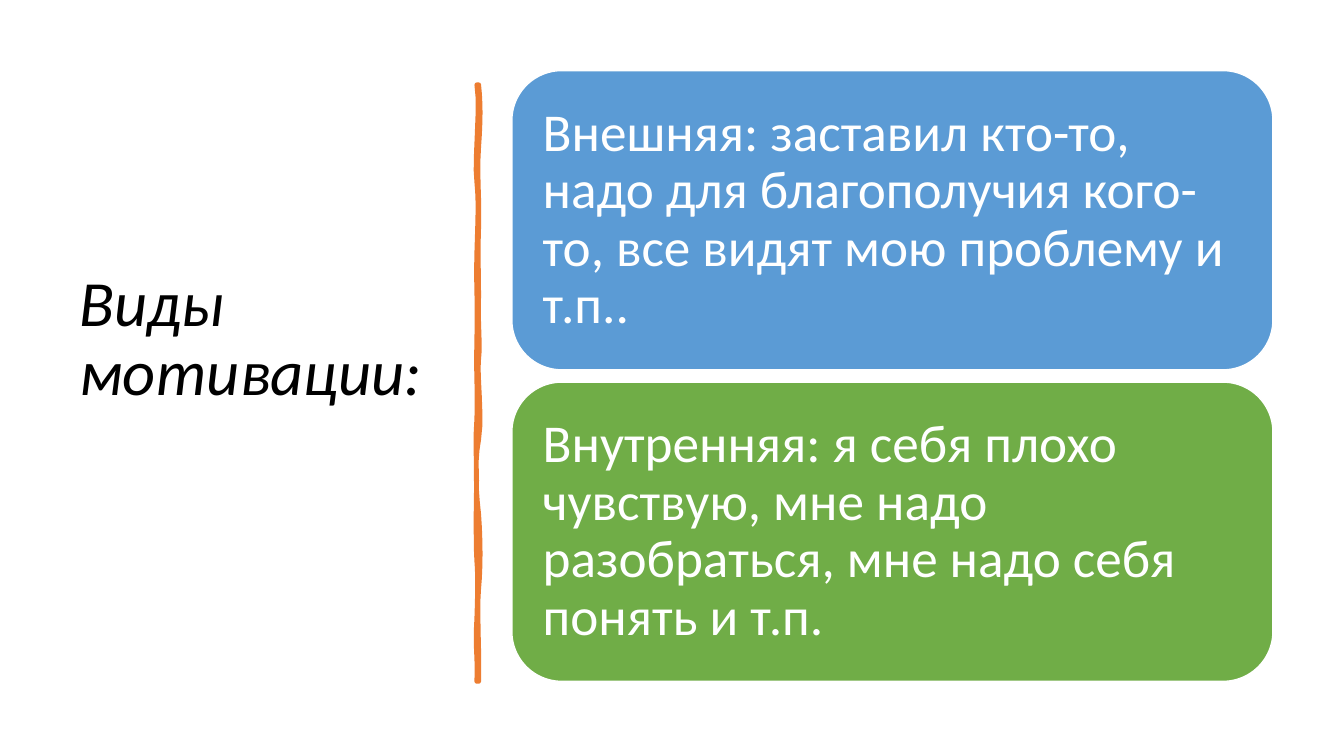
from pptx import Presentation
from pptx.dml.color import RGBColor
from pptx.enum.shapes import MSO_SHAPE as SHAPE
from pptx.enum.text import MSO_ANCHOR as ANCHOR, MSO_AUTO_SIZE as AUTO, PP_ALIGN as ALIGN
from pptx.util import Cm, Pt

BRUSH_UNIT = 0.0254  # cm
BRUSH_START = (475, 84)
# Cubic curves: two control points, then the end point
BRUSH_CURVES = [
    (477, 102, 477, 119, 475, 146), (473, 173, 476, 195, 475, 226),
    (474, 257, 475, 262, 475, 294), (474, 325, 477, 342, 475, 356),
    (473, 370, 479, 414, 475, 436), (471, 457, 472, 484, 475, 510),
    (477, 536, 477, 564, 475, 584), (473, 603, 476, 650, 475, 676),
    (474, 676, 473, 676, 473, 676), (474, 646, 471, 644, 473, 613),
    (474, 583, 474, 570, 473, 557), (472, 544, 472, 495, 473, 477),
    (473, 459, 471, 445, 473, 415), (474, 386, 472, 373, 473, 335),
    (474, 298, 472, 281, 473, 250), (474, 218, 475, 200, 473, 181),
    (470, 163, 477, 104, 473, 84), (474, 84, 474, 84, 475, 84),
]
CARDS = [
    ("5B9BD5", "Внешняя: заставил кто-то, надо для благополучия кого-то, "
               "все видят мою проблему и т.п.."),
    ("70AD47", "Внутренняя: я себя плохо чувствую, мне надо разобраться, "
               "мне надо себя понять и т.п."),
]
CARD_TOP, CARD_HEIGHT, CARD_GAP = 1.78, 7.54, 0.31


def rgb(value):
    return RGBColor.from_string(value)


def flatten(start, curves, steps=6):
    """Return points along a chain of cubic curves."""
    points = []
    for x1, y1, x2, y2, x3, y3 in curves:
        for i in range(1, steps + 1):
            t = i / steps
            u = 1 - t
            points.append(tuple(
                u**3 * a + 3 * u * u * t * b + 3 * u * t * t * c + t**3 * d
                for a, b, c, d in zip(start, (x1, y1), (x2, y2), (x3, y3))))
        start = (x3, y3)
    return points


class SlideBuilder:
    font = "Calibri"

    def __init__(self, prs):
        self.s = prs.slides.add_slide(prs.slide_layouts.get_by_name("Title Only"))

    def add_text(self, tf, text, size, color, italic=False):
        tf.word_wrap = True
        tf.auto_size = AUTO.NONE
        tf.vertical_anchor = ANCHOR.MIDDLE
        p = tf.paragraphs[0]
        p.alignment = ALIGN.LEFT
        p.line_spacing = 0.9
        r = p.add_run()
        r.text = text
        r.font.name = self.font
        r.font.size = Pt(size)
        r.font.italic = italic
        r.font.color.rgb = rgb(color)
        return p

    def title(self, text, left, top, width, height):
        sp = self.s.shapes.title
        sp.left, sp.top, sp.width, sp.height = map(Cm, (left, top, width, height))
        p = self.add_text(sp.text_frame, text, 46, "000000", italic=True)
        p.add_line_break()
        p.font.size = Pt(46)

    def paint(self, sp, fill, line, weight):
        sp.shadow.inherit = False
        sp.fill.solid()
        sp.fill.fore_color.rgb = rgb(fill)
        sp.line.color.rgb = rgb(line)
        sp.line.width = Pt(weight)

    def brush(self, start, curves, color):
        def to_cm(point):
            return tuple(Cm(v * BRUSH_UNIT) for v in point)

        outline = self.s.shapes.build_freeform(*to_cm(start))
        outline.add_line_segments([to_cm(pt) for pt in flatten(start, curves)], close=True)
        self.paint(outline.convert_to_shape(), color, color, 3.25)

    def card(self, text, fill, left, top, width, height):
        sp = self.s.shapes.add_shape(SHAPE.ROUNDED_RECTANGLE,
                                     *map(Cm, (left, top, width, height)))
        self.paint(sp, fill, "FFFFFF", 1)
        tf = sp.text_frame
        tf.margin_left = tf.margin_right = tf.margin_top = tf.margin_bottom = Cm(0.41)
        self.add_text(tf, text, 38, "FFFFFF")


def main():
    prs = Presentation()
    prs.slide_width, prs.slide_height = Cm(33.87), Cm(19.05)
    slide = SlideBuilder(prs)
    slide.title("Виды мотивации:", 1.75, 1.78, 9.5, 15.52)
    slide.brush(BRUSH_START, BRUSH_CURVES, "ED7D31")
    for i, (fill, text) in enumerate(CARDS):
        slide.card(text, fill, 12.9, CARD_TOP + i * (CARD_HEIGHT + CARD_GAP),
                   19.18, CARD_HEIGHT)
    prs.save("out.pptx")


if __name__ == "__main__":
    main()
